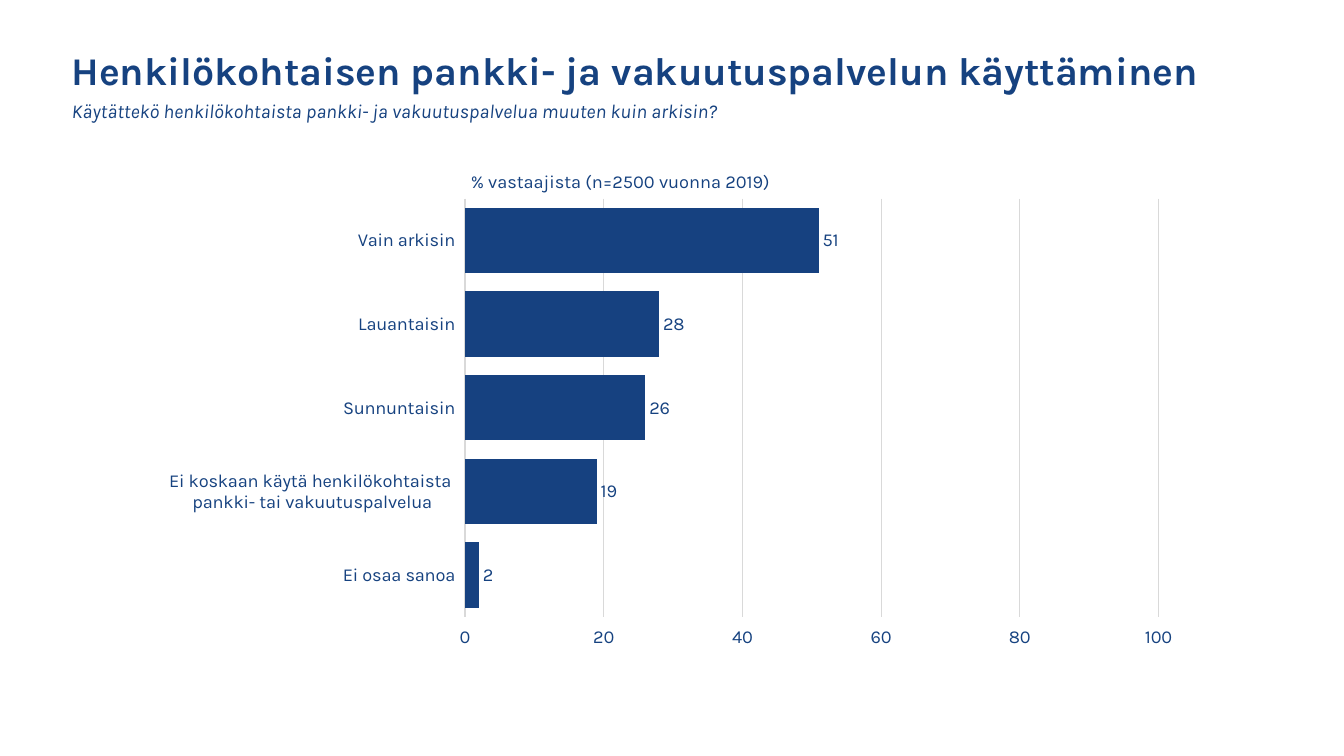
from dataclasses import dataclass

from lxml.etree import SubElement
from pptx import Presentation
from pptx.chart.data import CategoryChartData
from pptx.dml.color import RGBColor
from pptx.enum.chart import (XL_CHART_TYPE, XL_LABEL_POSITION,
                             XL_TICK_LABEL_POSITION, XL_TICK_MARK)
from pptx.enum.text import MSO_AUTO_SIZE
from pptx.oxml.ns import qn
from pptx.util import Inches, Pt

FONT, NAVY, BAR, GREY = "Karla", "164280", "164180", "D9D9D9"
WIDTH, HEIGHT = Inches(13.333), Inches(7.5)


@dataclass
class Box:
    """Left, top, width and height in percent of the slide."""
    left: float
    top: float
    width: float
    height: float

    def emu(self) -> tuple[int, int, int, int]:
        return (int(WIDTH * self.left / 100), int(HEIGHT * self.top / 100),
                int(WIDTH * self.width / 100), int(HEIGHT * self.height / 100))


@dataclass
class Label:
    text: str
    box: Box
    size: float
    bold: bool = False
    italic: bool = False
    wrap: bool = True
    inset: float = 0.13


LABELS = [
    Label("Henkilökohtaisen pankki- ja vakuutuspalvelun käyttäminen",
          Box(4.35, 5.2, 92.78, 8.13), 28, bold=True, wrap=False),
    Label("Käytättekö henkilökohtaista pankki- ja vakuutuspalvelua muuten kuin arkisin?",
          Box(4.35, 12.2, 85.8, 4.93), 14, italic=True),
    Label("% vastaajista (n=2500 vuonna 2019)",
          Box(34.65, 21.65, 64.58, 4.67), 13, inset=0.05),
]
ANSWERS = {
    "Vain arkisin": 51,
    "Lauantaisin": 28,
    "Sunnuntaisin": 26,
    "Ei koskaan käytä henkilökohtaista \npankki- tai vakuutuspalvelua": 19,
    "Ei osaa sanoa": 2,
}
CHART_BOX = Box(0, 19.15, 100, 79.07)
PLOT = {"x": 0.346, "y": 0.09, "w": 0.516, "h": 0.7}


def rgb(color: str) -> RGBColor:
    return RGBColor.from_string(color)


def style(font, size: float) -> None:
    font.name, font.size = FONT, Pt(size)
    font.color.rgb = rgb(NAVY)


def add_label(s, label: Label) -> None:
    tf = s.shapes.add_textbox(*label.box.emu()).text_frame
    tf.word_wrap = label.wrap
    tf.auto_size = MSO_AUTO_SIZE.SHAPE_TO_FIT_TEXT
    tf.margin_left, tf.margin_right = Inches(label.inset), Inches(0.13)
    tf.margin_top = tf.margin_bottom = Inches(0.07)
    tf.text = label.text
    r = tf.paragraphs[0].runs[0]
    style(r.font, label.size)
    r.font.bold, r.font.italic = label.bold, label.italic


def place_plot(chart, shares: dict[str, float]) -> None:
    """Fix the inner plot area as shares of the chart."""
    area = chart._chartSpace.chart.plotArea
    for old in area.findall(qn("c:layout")):
        area.remove(old)
    layout = SubElement(area, qn("c:layout"))
    area.insert(0, layout)
    manual = SubElement(layout, qn("c:manualLayout"))
    settings = {"layoutTarget": "inner", "xMode": "edge", "yMode": "edge", **shares}
    for tag, value in settings.items():
        SubElement(manual, qn(f"c:{tag}")).set("val", str(value))


def add_bars(s, answers: dict[str, int]) -> None:
    data = CategoryChartData()
    data.categories = list(answers)
    data.add_series("Series 1", list(answers.values()))
    chart = s.shapes.add_chart(XL_CHART_TYPE.BAR_CLUSTERED, *CHART_BOX.emu(), data).chart
    chart.has_legend = chart.has_title = False
    style(chart.font, 13)
    place_plot(chart, PLOT)

    # Bars and their values
    plot = chart.plots[0]
    plot.gap_width = 28
    plot.vary_by_categories = False
    fill = plot.series[0].format.fill
    fill.solid()
    fill.fore_color.rgb = rgb(BAR)
    plot.has_data_labels = True
    labels = plot.data_labels
    labels.show_value = True
    labels.position = XL_LABEL_POSITION.OUTSIDE_END
    style(labels.font, 13)

    # Axes: first answer on top, scale numbers beside the last answer
    cat, val = chart.category_axis, chart.value_axis
    for axis in (cat, val):
        axis.major_tick_mark = axis.minor_tick_mark = XL_TICK_MARK.NONE
        style(axis.tick_labels.font, 13)
    cat.reverse_order = True
    cat.tick_label_position = XL_TICK_LABEL_POSITION.LOW
    val.tick_label_position = XL_TICK_LABEL_POSITION.HIGH
    cat.has_major_gridlines = False
    val.minimum_scale, val.maximum_scale, val.major_unit = 0, 100, 20
    val.has_major_gridlines = True
    val.format.line.fill.background()
    for line, width in ((cat.format.line, 0.25), (val.major_gridlines.format.line, 0.75)):
        line.width = Pt(width)
        line.color.rgb = rgb(GREY)


def main() -> None:
    prs = Presentation()
    prs.slide_width, prs.slide_height = WIDTH, HEIGHT
    s = prs.slides.add_slide(prs.slide_layouts[6])
    add_bars(s, ANSWERS)
    for label in LABELS:
        add_label(s, label)
    prs.save("out.pptx")


if __name__ == "__main__":
    main()
